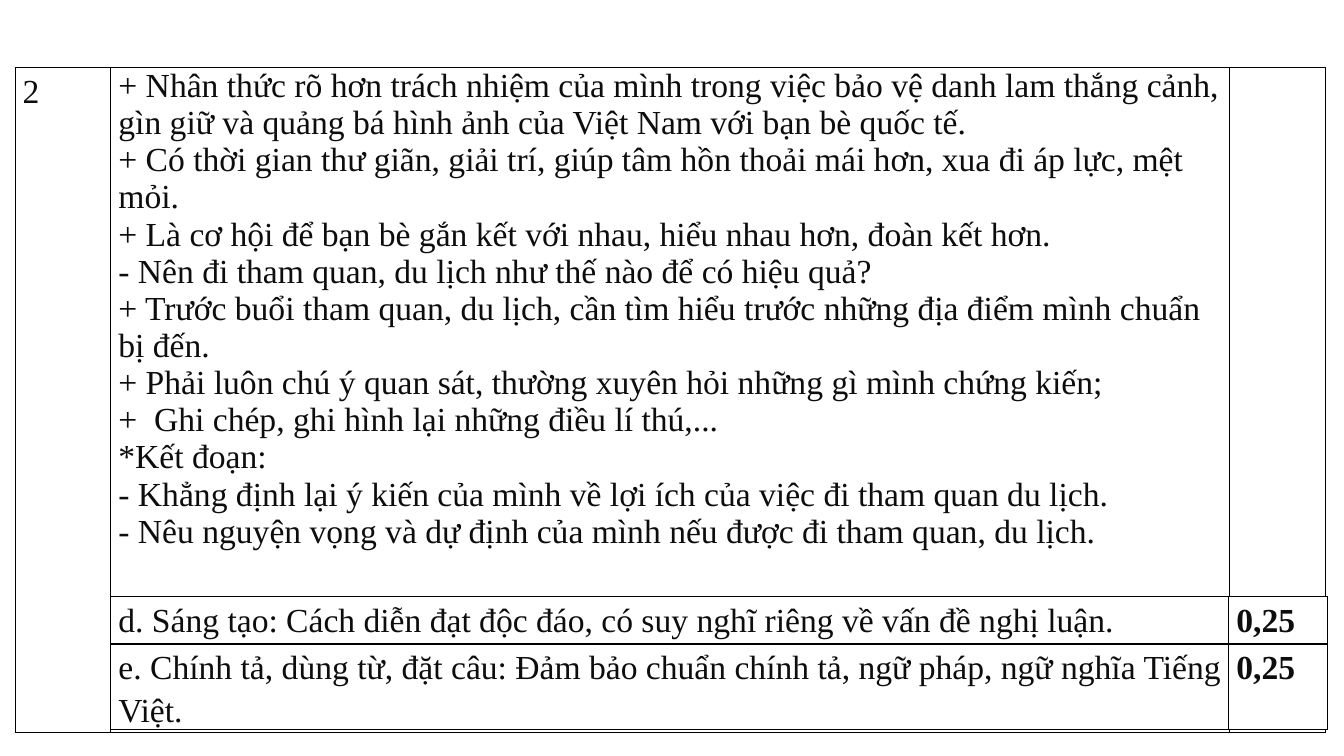
"""Build the marking-guide slide with its two bordered tables."""
from dataclasses import dataclass
from typing import Any

from lxml.etree import SubElement
from pptx import Presentation
from pptx.dml.color import RGBColor
from pptx.enum.text import PP_ALIGN
from pptx.oxml.ns import qn
from pptx.slide import Slide
from pptx.table import _Cell
from pptx.util import Pt

COLOURS = {"paper": "FFFFFF", "ink": "0D0D0D", "border": "000000"}
CELL_FORMAT = {"margin_left": Pt(5.4), "margin_right": Pt(5.4),
               "margin_top": Pt(0), "margin_bottom": Pt(0)}
FONT_FORMAT = {"name": "Times New Roman", "size": Pt(24)}
PLAIN = {"alignment": PP_ALIGN.LEFT}
SPACED = {"alignment": PP_ALIGN.JUSTIFY, "line_spacing": 1.15, "space_after": Pt(10)}


@dataclass(frozen=True)
class Entry:
    paragraphs: tuple[str, ...] = ()
    layout: str = "spaced"
    bold: bool = False


@dataclass(frozen=True)
class Guide:
    left: float
    top: float
    columns: tuple[float, ...]
    row_height: float
    rows: tuple[tuple[Entry, ...], ...]


LAYOUTS = {"plain": PLAIN, "spaced": SPACED}
BENEFITS = (
    "+ Nhân thức rõ hơn trách nhiệm của mình trong việc bảo vệ danh lam thắng cảnh, "
    "gìn giữ và quảng bá hình ảnh của Việt Nam với bạn bè quốc tế.",
    "+ Có thời gian thư giãn, giải trí, giúp tâm hồn thoải mái hơn, xua đi áp lực, mệt mỏi.",
    "+ Là cơ hội để bạn bè gắn kết với nhau, hiểu nhau hơn, đoàn kết hơn.",
    "- Nên đi tham quan, du lịch như thế nào để có hiệu quả?\v"
    "+ Trước buổi tham quan, du lịch, cần tìm hiểu trước những địa điểm mình chuẩn bị đến.",
    "+ Phải luôn chú ý quan sát, thường xuyên hỏi những gì mình chứng kiến;",
    "+  Ghi chép, ghi hình lại những điều lí thú,...",
    "*Kết đoạn:",
    "- Khẳng định lại ý kiến của mình về lợi ích của việc đi tham quan du lịch.",
    "- Nêu nguyện vọng và dự định của mình nếu được đi tham quan, du lịch.",
)
CREATIVITY = "d. Sáng tạo: Cách diễn đạt độc đáo, có suy nghĩ riêng về vấn đề nghị luận."
SPELLING = ("e. Chính tả, dùng từ, đặt câu: Đảm bảo chuẩn chính tả, ngữ pháp, "
            "ngữ nghĩa Tiếng Việt.")
SCORE = Entry(("0,25",), bold=True)

GUIDES = (
    Guide(10.8, 48.3, (68.4, 799, 68.4), 475,
          ((Entry(("2",)), Entry(BENEFITS, "plain"), Entry()),)),
    Guide(79.2, 426.2, (798.5, 70.6), 33.8,
          ((Entry((CREATIVITY,)), SCORE), (Entry((SPELLING,)), SCORE))),
)


def apply_format(target: Any, values: dict[str, Any]) -> None:
    for name, value in values.items():
        setattr(target, name, value)


def draw_borders(cell: _Cell) -> None:
    properties = cell._tc.get_or_add_tcPr()
    for position, side in enumerate(("lnL", "lnR", "lnT", "lnB")):
        border = SubElement(properties, qn(f"a:{side}"), w=str(Pt(1)))
        properties.insert(position, border)
        ink = SubElement(border, qn("a:solidFill"))
        SubElement(ink, qn("a:srgbClr"), val=COLOURS["border"])


def fill_cell(cell: _Cell, entry: Entry) -> None:
    apply_format(cell, CELL_FORMAT)
    cell.fill.solid()
    cell.fill.fore_color.rgb = RGBColor.from_string(COLOURS["paper"])
    draw_borders(cell)
    cell.text_frame.text = "\n".join(entry.paragraphs)
    for paragraph in cell.text_frame.paragraphs:
        apply_format(paragraph, LAYOUTS[entry.layout])
        for run in paragraph.runs:
            apply_format(run.font, FONT_FORMAT | {"bold": entry.bold})
            run.font.color.rgb = RGBColor.from_string(COLOURS["ink"])


def draw_guide(slide: Slide, guide: Guide) -> None:
    grid = slide.shapes.add_table(
        len(guide.rows), len(guide.columns), Pt(guide.left), Pt(guide.top),
        Pt(sum(guide.columns)), Pt(guide.row_height * len(guide.rows))).table
    apply_format(grid, {"first_row": False, "horz_banding": False})
    for column, width in zip(grid.columns, guide.columns):
        column.width = Pt(width)
    for row, entries in zip(grid.rows, guide.rows):
        row.height = Pt(guide.row_height)
        for cell, entry in zip(row.cells, entries):
            fill_cell(cell, entry)


def main() -> None:
    presentation = Presentation()
    apply_format(presentation, {"slide_width": Pt(960), "slide_height": Pt(540)})
    slide = presentation.slides.add_slide(presentation.slide_layouts[6])
    for guide in GUIDES:
        draw_guide(slide, guide)
    presentation.save("out.pptx")


if __name__ == "__main__":
    main()
